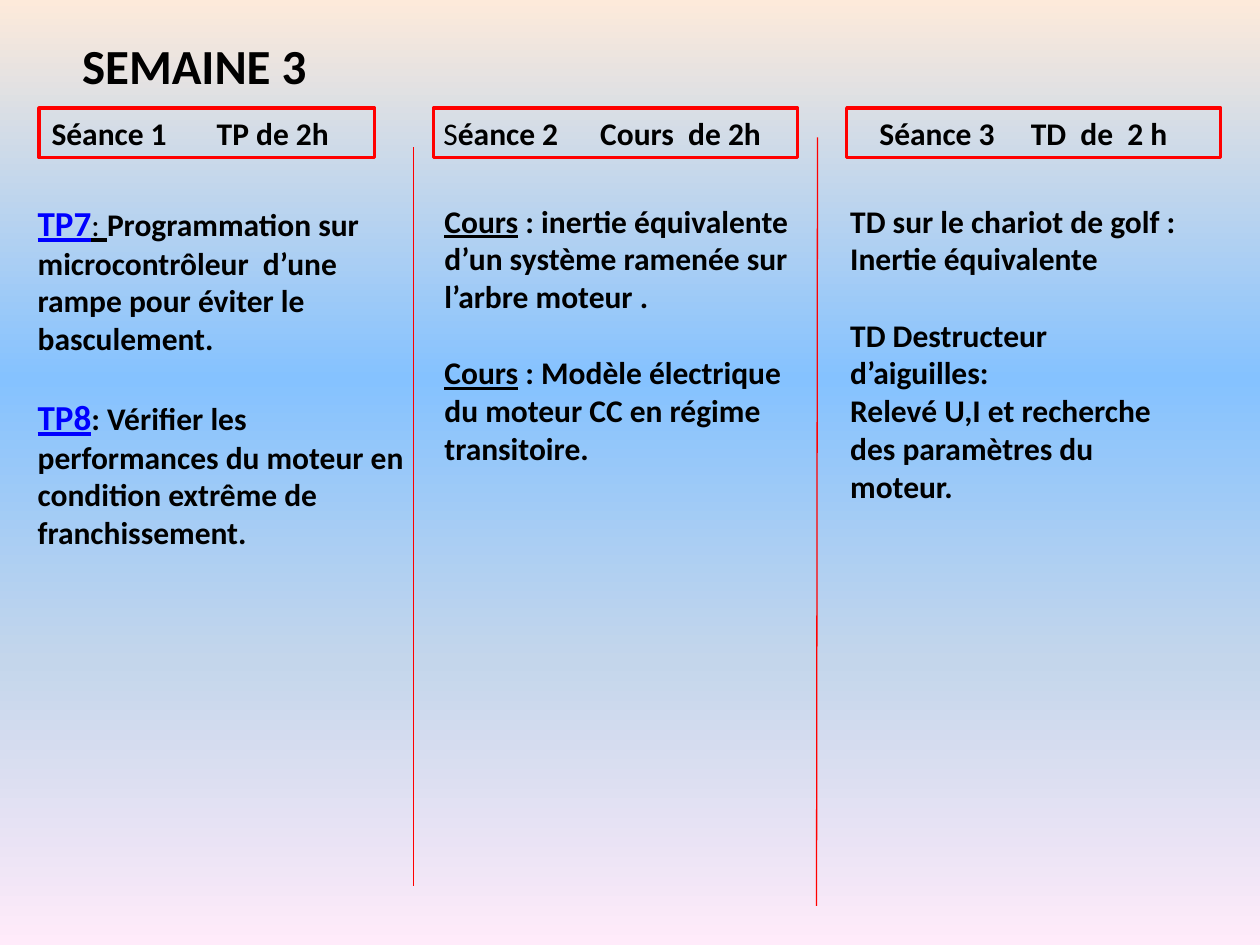
"""Build the weekly teaching plan slide for week 3."""
from copy import deepcopy

from lxml import etree
from pptx import Presentation
from pptx.dml.color import RGBColor
from pptx.enum.shapes import MSO_CONNECTOR, MSO_SHAPE
from pptx.enum.text import MSO_ANCHOR, MSO_AUTO_SIZE, PP_ALIGN
from pptx.oxml.ns import qn
from pptx.util import Cm, Pt

LEFT = PP_ALIGN.LEFT
TOP = MSO_ANCHOR.TOP
MIDDLE = MSO_ANCHOR.MIDDLE
NO_FIT = MSO_AUTO_SIZE.NONE
RECTANGLE = MSO_SHAPE.RECTANGLE
STRAIGHT = MSO_CONNECTOR.STRAIGHT

BLACK = RGBColor(0x00, 0x00, 0x00)
RED = RGBColor(0xFF, 0x00, 0x00)
BLUE = RGBColor(0x00, 0x00, 0xFF)
SKY = (
    (0, RGBColor(0xFD, 0xEA, 0xDA)),
    (0.4, RGBColor(0x85, 0xC2, 0xFF)),
    (0.7, RGBColor(0xC4, 0xD6, 0xEB)),
    (1, RGBColor(0xFF, 0xEB, 0xFA)),
)

PLAIN = {}
LIGHT = {"bold": False}
UNDERLINED = {"underline": True}
LINK = {"size": Pt(20), "underline": True, "color": BLUE}

HEADER_TOP, HEADER_HEIGHT = 2.18, 1
BODY_TOP = 3.94

HEADERS = (
    (0.79, 6.76, 0.25, 3.33, [("Séance 1\tTP de 2h", PLAIN)]),
    (8.74, 7.34, 0.2, 3.16, [("S", LIGHT), ("éance 2\tCours  de 2h", PLAIN)]),
    (17.07, 7.54, 0.66, 3.05, [("Séance 3\tTD  de  2 h", PLAIN)]),
)
BODIES = (
    (0.51, 8.33, 7.34, (
        (0, [("TP7", LINK), (": ", {"bold": False, "underline": True}),
             ("Programmation sur microcontrôleur  d’une rampe pour éviter le basculement.", PLAIN)]),
        (22, [("TP8", LINK),
              (": Vérifier les performances du moteur en condition extrême de franchissement.", PLAIN)]),
    )),
    (8.71, 7.54, 5.64, (
        (0, [("Cours", UNDERLINED),
             (" : inertie équivalente d’un système ramenée sur l’arbre moteur .", PLAIN)]),
        (22, [("Cours", UNDERLINED),
              (" : Modèle électrique du moteur CC en régime transitoire.", PLAIN)]),
    )),
    (16.89, 7.39, 6.4, (
        (0, [("TD sur le chariot de golf : Inertie équivalente", PLAIN)]),
        (22, [("TD Destructeur d’aiguilles:", PLAIN)]),
        (0, [("Relevé U,I et recherche des paramètres du moteur.", PLAIN)]),
    )),
)
DIVIDERS = ((8.33, 2.97, 8.33, 17.86), (16.48, 2.77, 16.46, 18.26))


class WeekPlan:
    """Hold the text style and the current slide."""

    def __init__(self, slide):
        self.slide = slide
        self.style = {"name": "Calibri", "size": Pt(18), "bold": True,
                      "underline": False, "color": BLACK}

    def background(self, stops):
        fill = self.slide.background.fill
        fill.gradient()
        fill.gradient_angle = 270
        stop_list = self.slide.element.find(".//" + qn("a:gsLst"))
        while len(stop_list) < len(stops):
            stop_list.append(deepcopy(stop_list[0]))
        for stop, (position, color) in zip(fill.gradient_stops, stops):
            stop.position = position
            stop.color.rgb = color

    def frame(self, shape, anchor):
        frame = shape.text_frame
        settings = {"word_wrap": True, "auto_size": NO_FIT, "vertical_anchor": anchor}
        for key, value in settings.items():
            setattr(frame, key, value)
        return frame

    def add_runs(self, paragraph, runs):
        paragraph.alignment = LEFT
        for words, changes in runs:
            run = paragraph.add_run()
            run.text = words
            for key, value in {**self.style, **changes}.items():
                if key == "color":
                    run.font.color.rgb = value
                else:
                    setattr(run.font, key, value)

    def title(self, words, left, top, width, height):
        heading = self.slide.shapes.title
        place = {"left": left, "top": top, "width": width, "height": height}
        for key, value in place.items():
            setattr(heading, key, Cm(value))
        self.add_runs(self.frame(heading, TOP).paragraphs[0], [(words, {"size": Pt(28)})])

    def header(self, left, width, inset, tab, runs):
        box = self.slide.shapes.add_shape(
            RECTANGLE, Cm(left), Cm(HEADER_TOP), Cm(width), Cm(HEADER_HEIGHT))
        box.shadow.inherit = False
        box.fill.background()
        box.line.color.rgb = RED
        box.line.width = Pt(2)
        frame = self.frame(box, MIDDLE)
        frame.margin_left = Cm(inset)
        session = frame.paragraphs[0]
        self.add_runs(session, runs)
        tabs = etree.SubElement(session._p.get_or_add_pPr(), qn("a:tabLst"))
        etree.SubElement(tabs, qn("a:tab"), pos=str(int(Cm(tab))), algn="l")

    def body(self, left, width, height, paragraphs):
        box = self.slide.shapes.add_textbox(Cm(left), Cm(BODY_TOP), Cm(width), Cm(height))
        frame = self.frame(box, TOP)
        for index, (gap, runs) in enumerate(paragraphs):
            activity = frame.add_paragraph() if index else frame.paragraphs[0]
            activity.space_before = Pt(gap)
            self.add_runs(activity, runs)

    def divider(self, *ends):
        rule = self.slide.shapes.add_connector(STRAIGHT, *map(Cm, ends))
        rule.line.color.rgb = RED
        rule.line.width = Pt(0.75)
        etree.SubElement(rule._element.spPr, qn("a:effectLst"))


def main():
    deck = Presentation()
    deck.slide_width, deck.slide_height = Cm(25.4), Cm(19.05)
    plan = WeekPlan(deck.slides.add_slide(deck.slide_layouts[5]))
    plan.background(SKY)
    plan.title("SEMAINE 3", 1.4, 0.58, 5.94, 1.45)
    for header in HEADERS:
        plan.header(*header)
    for divider in DIVIDERS:
        plan.divider(*divider)
    for body in BODIES:
        plan.body(*body)
    deck.save("out.pptx")


if __name__ == "__main__":
    main()
